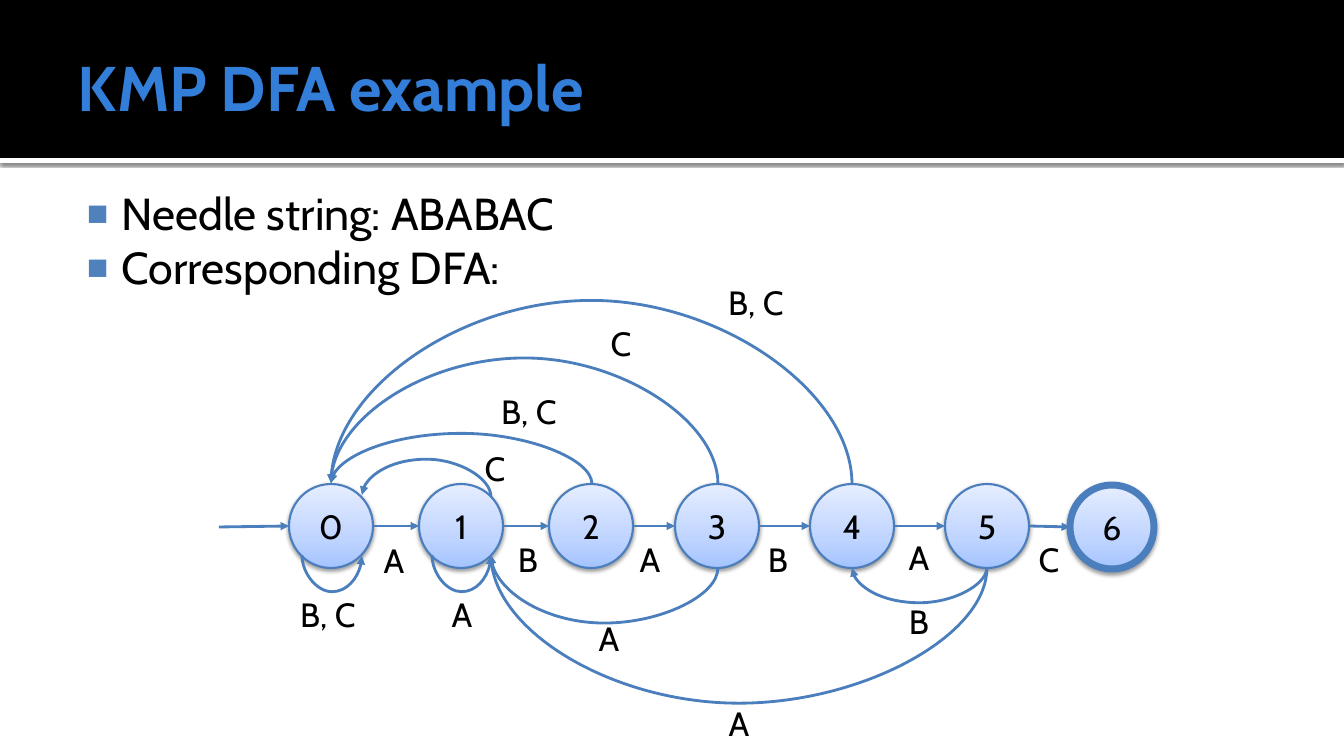
from lxml import etree
from pptx import Presentation
from pptx.dml.color import RGBColor
from pptx.enum.shapes import MSO_CONNECTOR, MSO_SHAPE
from pptx.enum.text import MSO_ANCHOR, PP_ALIGN
from pptx.oxml.ns import qn
from pptx.util import Pt

STRAIGHT, CURVE = MSO_CONNECTOR.STRAIGHT, MSO_CONNECTOR.CURVE
RECT, OVAL = MSO_SHAPE.RECTANGLE, MSO_SHAPE.OVAL
MIDDLE, TOP = MSO_ANCHOR.MIDDLE, MSO_ANCHOR.TOP
LEFT, CENTER = PP_ALIGN.LEFT, PP_ALIGN.CENTER

BLACK = RGBColor(0x00, 0x00, 0x00)
WHITE = RGBColor(0xFF, 0xFF, 0xFF)
TITLE = RGBColor(0x33, 0x7E, 0xD9)
BULLET = RGBColor(0x4F, 0x81, 0xBD)
EDGE = RGBColor(0x4B, 0x7E, 0xBC)
STOPS = [(0, RGBColor(0xA4, 0xC4, 0xFF)),
         (35, RGBColor(0xBF, 0xD4, 0xFF)),
         (100, RGBColor(0xE6, 0xEE, 0xFF))]

WIDE, HIGH = 1344, 756
SCALE = 12192000 / WIDE


def emu(px):
    return round(px * SCALE)


def add(parent, tag, **attrs):
    return etree.SubElement(parent, qn(tag), {k: str(v) for k, v in attrs.items()})


class Board:
    font = "Cabin"

    def __init__(self, deck):
        self.shapes = deck.slides.add_slide(deck.slide_layouts[6]).shapes

    def fill_text(self, shape, lines, size, color=BLACK, bold=False,
                  align=CENTER, anchor=TOP):
        frame = shape.text_frame
        frame.text = "\n".join(lines)
        frame.vertical_anchor = anchor
        for para in frame.paragraphs:
            para.alignment = align
            font = para.runs[0].font
            font.name, font.size, font.bold = self.font, Pt(size), bold
            font.color.rgb = color
        return frame

    def text(self, x, y, w, h, lines, size, pad=(10, 5, 10, 5), **style):
        box = self.shapes.add_textbox(*map(emu, (x, y, w, h)))
        frame = self.fill_text(box, lines, size, **style)
        frame.word_wrap = True
        (frame.margin_left, frame.margin_top,
         frame.margin_right, frame.margin_bottom) = map(emu, pad)
        return frame

    def bullets(self, x, y, w, h, lines, size, **style):
        frame = self.text(x, y, w, h, lines, size, align=LEFT, **style)
        for para in frame.paragraphs:
            props = para._p.get_or_add_pPr()
            props.set("marL", str(emu(48)))
            props.set("indent", str(emu(-35)))
            add(add(props, "a:buClr"), "a:srgbClr", val=BULLET)
            add(props, "a:buSzPct", val=80000)
            add(props, "a:buFont", typeface="Arial")
            add(props, "a:buChar", char="■")

    def shade(self, shape, alpha, blur, dist):
        effects = shape._element.spPr.find(qn("a:effectLst"))
        cast = add(effects, "a:outerShdw", blurRad=int(Pt(blur)), dist=int(Pt(dist)),
                   dir=5400000, rotWithShape=0)
        add(add(cast, "a:srgbClr", val=BLACK), "a:alpha", val=alpha * 1000)

    def shape(self, kind, x, y, w, h):
        shape = self.shapes.add_shape(kind, *map(emu, (x, y, w, h)))
        shape.shadow.inherit = False
        return shape

    def band(self, y, h, color):
        band = self.shape(RECT, 0, y, WIDE, h)
        band.fill.solid()
        band.fill.fore_color.rgb = color
        band.line.fill.background()
        return band

    def state(self, x, y, size, name, width):
        node = self.shape(OVAL, x, y, size, size)
        node.fill.gradient()
        node.fill.gradient_angle = 90
        stops = next(node._element.spPr.iter(qn("a:gsLst")))
        for stop in list(stops):
            stops.remove(stop)
        for pos, color in STOPS:
            add(add(stops, "a:gs", pos=pos * 1000), "a:srgbClr", val=color)
        node.line.color.rgb = EDGE
        node.line.width = Pt(width)
        self.shade(node, 38, 3.1, 1.6)
        self.fill_text(node, [name], 24, anchor=MIDDLE)

    def arrow(self, x1, y1, x2, y2, kind=STRAIGHT):
        link = self.shapes.add_connector(kind, *map(emu, (x1, y1, x2, y2)))
        link.line.color.rgb = EDGE
        link.line.width = Pt(2)
        props = link._element.spPr
        add(props.find(qn("a:ln")), "a:tailEnd", type="triangle")
        add(props, "a:effectLst")
        return link

    def arc(self, x1, y1, x2, y2, peak):
        """Curved arrow on its side, bulging to the height peak."""
        link = self.arrow(x1, y1, x2, y2, CURVE)
        w, h = abs(y2 - y1), abs(x2 - x1)
        link.left, link.top = emu((x1 + x2 - w) / 2), emu((y1 + y2 - h) / 2)
        link.width, link.height = emu(w), emu(h)
        right = peak > y1 and x2 < x1
        props = link._element.spPr
        frame = props.find(qn("a:xfrm"))
        frame.set("rot", str((90 if right else 270) * 60000))
        frame.set("flipH", str(int((y2 > y1) != right)))
        frame.set("flipV", str(int((x2 < x1) != right)))
        guides = next(props.iter(qn("a:avLst")))
        bend = round((peak - y1) / (y2 - y1) * 100000)
        add(guides, "a:gd", name="adj1", fmla=f"val {bend}")

    def label(self, mid, y, text):
        w = 102 if "," in text else 58
        self.text(mid - w // 2, y, w, 50, [text], 24)


def main():
    deck = Presentation()
    deck.slide_width, deck.slide_height = emu(WIDE), emu(HIGH)
    board = Board(deck)

    # Header and bullets
    board.shade(board.band(158, 5, WHITE), 60, 2.5, 0.8)
    board.band(0, 158, BLACK)
    board.text(68, 17, 1210, 138, ["KMP DFA example"], 45, pad=(10, 5, 5, 5),
               color=TITLE, bold=True, align=LEFT, anchor=MIDDLE)
    board.bullets(68, 176, 1210, 123, ["Needle string: ABABAC", "Corresponding DFA:"],
                  32, pad=(6, 10, 10, 5))

    # States
    size, top = 84, 484
    mid = top + size // 2
    lefts = [289, 419, 549, 675, 810, 945, 1070]
    last = len(lefts) - 1
    for i, x in enumerate(lefts):
        final = i == last
        board.state(x, top + final, size, str(i), 5 if final else 1.5)

    # Forward steps
    board.arrow(219, mid + 1, lefts[0], mid)
    for i in range(last):
        board.arrow(lefts[i] + size, mid, lefts[i + 1], mid + (i + 1 == last))

    # Loops and steps back
    for ends in [(302, 555, 362, 556, 592), (432, 555, 491, 556, 592),
                 (491, 497, 362, 495, 459), (592, 484, 331, 483, 433),
                 (718, 484, 331, 483, 357), (852, 484, 331, 483, 299),
                 (718, 568, 491, 555, 623), (987, 567, 852, 568, 603),
                 (987, 568, 491, 555, 703)]:
        board.arc(*ends)

    # Input letters
    for spot in [(394, 535, "A"), (528, 534, "B"), (650, 534, "A"),
                 (778, 534, "B"), (919, 532, "A"), (1049, 534, "C"),
                 (328, 589, "B, C"), (462, 589, "A"), (495, 443, "C"),
                 (529, 386, "B, C"), (621, 318, "C"), (756, 277, "B, C"),
                 (609, 613, "A"), (919, 596, "B"), (739, 698, "A")]:
        board.label(*spot)

    deck.save("out.pptx")


if __name__ == "__main__":
    main()
